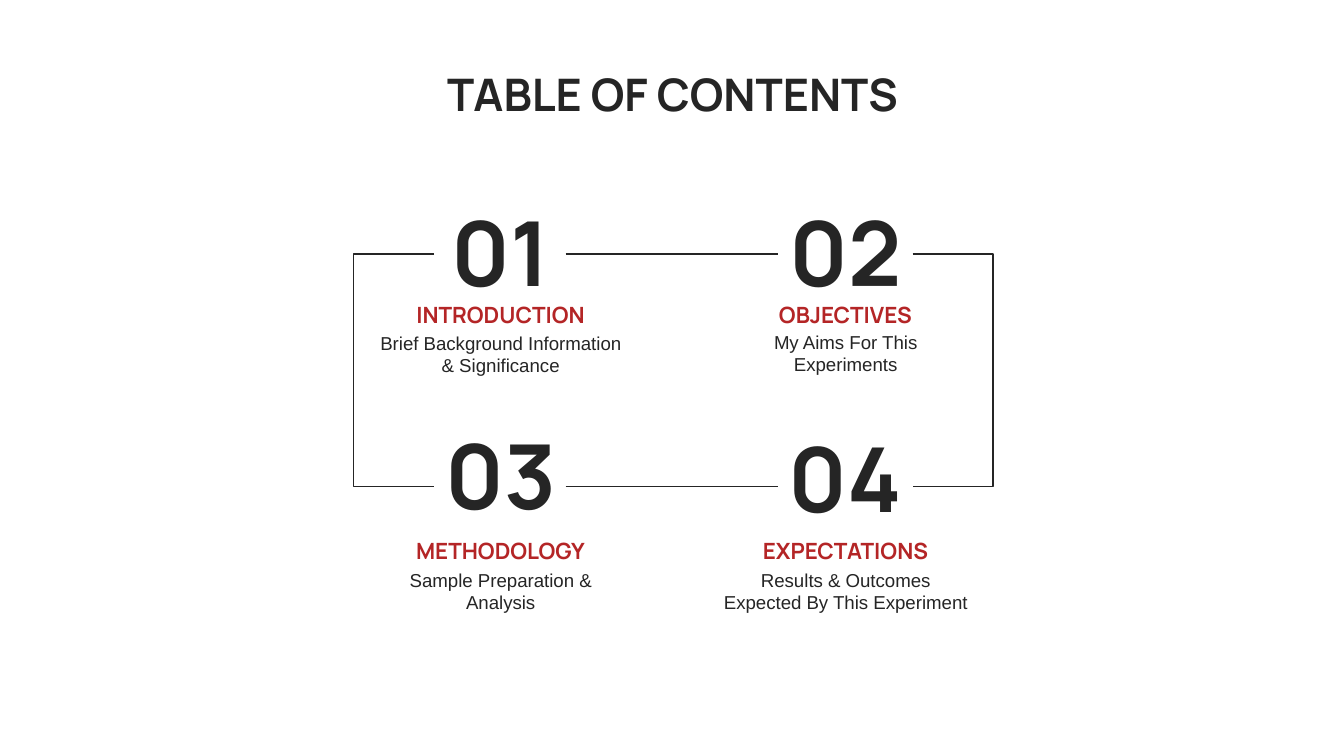
from lxml.etree import SubElement
from pptx import Presentation
from pptx.dml.color import RGBColor
from pptx.enum.shapes import MSO_CONNECTOR as Connector
from pptx.enum.text import MSO_ANCHOR as Anchor, MSO_AUTO_SIZE as AutoSize, PP_ALIGN as Align
from pptx.oxml.ns import qn
from pptx.util import Pt

COLORS = {"ink": "252525", "accent": "B42526"}
HEADLINE = "TABLE OF CONTENTS"
SECTIONS = [
    {"number": "01", "heading": "INTRODUCTION", "summary": "Brief Background Information & Significance",
     "number_top": 111.6, "summary_top": 170.6},
    {"number": "02", "heading": "OBJECTIVES", "summary": "My Aims For This\nExperiments",
     "number_top": 111.6, "summary_top": 169.9},
    {"number": "03", "heading": "METHODOLOGY", "summary": "Sample Preparation & Analysis",
     "number_top": 231.1, "summary_top": 297.4},
    {"number": "04", "heading": "EXPECTATIONS", "summary": "Results & Outcomes\vExpected By This Experiment",
     "number_top": 232.6, "summary_top": 297.4},
]
COLUMN_CENTERS = [268.2, 453]
HEADING_TOPS = [137.5, 264.2]
RULE_YS = [136.1, 260.5]
RULE_XS = [303.1, 416.9]
BRACKETS = [(232.6, 189.4), (488.9, 532.1)]
ROW_HEIGHT = 45.4
INSET = 7.2

STYLES = {
    "headline": {"anchor": Anchor.BOTTOM, "color": "ink",
                 "font": {"name": "Manrope", "size": Pt(24), "bold": True}},
    "number": {"width": 138.2, "anchor": Anchor.MIDDLE, "color": "ink",
               "font": {"name": "Manrope", "size": Pt(48), "bold": True}},
    "heading": {"width": 146.2, "anchor": Anchor.BOTTOM, "color": "accent",
                "font": {"name": "Manrope", "size": Pt(12), "bold": True}},
    "summary": {"width": 149.8, "anchor": Anchor.TOP, "color": "ink",
                "font": {"name": "Arial", "size": Pt(10), "bold": False}},
}


def set_all(target, values):
    for attribute, value in values.items():
        setattr(target, attribute, value)


def write(holder, wording, style):
    frame = holder.text_frame
    frame.text = wording
    set_all(frame, {"word_wrap": True, "auto_size": AutoSize.NONE, "vertical_anchor": style["anchor"]})
    set_all(frame, {f"margin_{side}": Pt(INSET) for side in ("left", "top", "right", "bottom")})
    for paragraph in frame.paragraphs:
        paragraph.alignment = Align.CENTER
        for run in paragraph.runs:
            set_all(run.font, style["font"])
            run.font.color.rgb = RGBColor.from_string(COLORS[style["color"]])


def draw_line(line):
    line.width = Pt(0.75)
    line.color.rgb = RGBColor.from_string(COLORS["ink"])


def add_section(slide, index, section):
    row, column = divmod(index, 2)
    tops = {"heading": HEADING_TOPS[row], "summary": section["summary_top"], "number": section["number_top"]}
    for part, top in tops.items():
        width = STYLES[part]["width"]
        left = COLUMN_CENTERS[column] - width / 2
        holder = slide.shapes.add_textbox(Pt(left), Pt(top), Pt(width), Pt(ROW_HEIGHT))
        write(holder, section[part], STYLES[part])


def add_frame(slide):
    start, end = RULE_XS
    for y in RULE_YS:
        rule = slide.shapes.add_connector(Connector.STRAIGHT, Pt(start), Pt(y), Pt(end), Pt(y))
        draw_line(rule.line)
        SubElement(rule._element.spPr, qn("a:effectLst"))
    upper, lower = RULE_YS
    for inner, outer in BRACKETS:
        outline = slide.shapes.build_freeform(Pt(inner), Pt(upper))
        corners = [(outer, upper), (outer, lower), (inner, lower)]
        outline.add_line_segments([(Pt(x), Pt(y)) for x, y in corners], close=False)
        bracket = outline.convert_to_shape()
        bracket.fill.background()
        bracket.shadow.inherit = False
        draw_line(bracket.line)


def main():
    """Build the table of contents slide."""
    deck = Presentation()
    set_all(deck, {"slide_width": Pt(720), "slide_height": Pt(405)})
    slide = deck.slides.add_slide(deck.slide_layouts[5])
    headline = slide.shapes.title
    set_all(headline, {"left": Pt(172), "top": Pt(21.6), "width": Pt(376.6), "height": Pt(50.4)})
    write(headline, HEADLINE, STYLES["headline"])
    for index, section in enumerate(SECTIONS):
        add_section(slide, index, section)
    add_frame(slide)
    deck.save("out.pptx")


if __name__ == "__main__":
    main()
